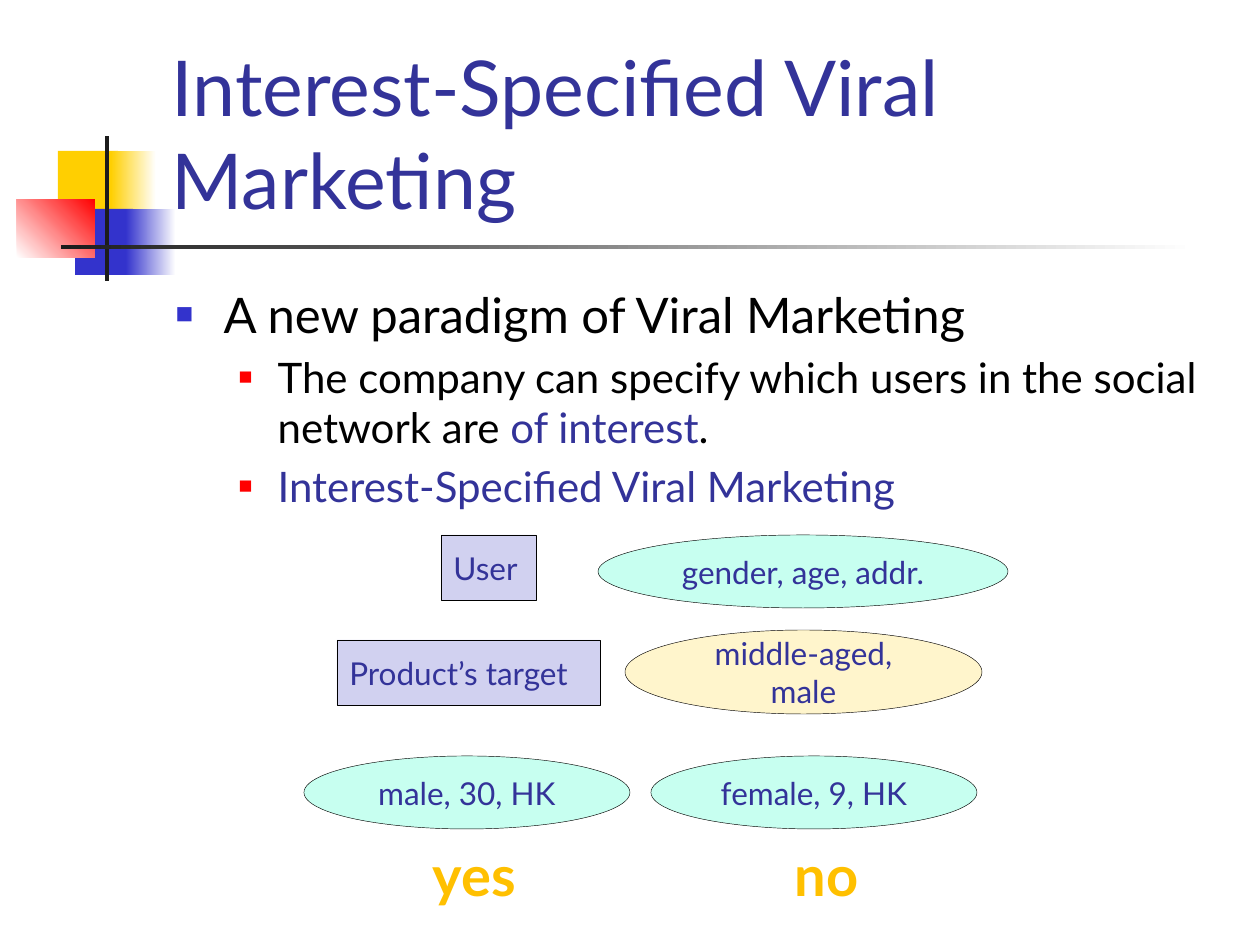
"""Build a slide on interest-specified viral marketing."""
import pptx
import pptx.util
import pptx.dml.color
import pptx.enum.shapes
import pptx.enum.text
import pptx.oxml
import pptx.oxml.ns

RGB = pptx.dml.color.RGBColor
SHAPE = pptx.enum.shapes.MSO_SHAPE
ALIGN = pptx.enum.text.PP_ALIGN
ANCHOR = pptx.enum.text.MSO_ANCHOR
Pt = pptx.util.Pt

SCALE = 914400 / 126
FONT = "Lato"
INK = RGB(0x33, 0x33, 0x99)
BLACK = RGB(0, 0, 0)
WHITE = RGB(0xFF, 0xFF, 0xFF)
YELLOW = RGB(0xFF, 0xCF, 0x01)
BLUE = RGB(0x33, 0x33, 0xCC)
RED = RGB(0xFF, 0, 0)
DARK = RGB(0x1C, 0x1C, 0x1C)
LILAC = RGB(0xD1, 0xD1, 0xF0)
MINT = RGB(0xC7, 0xFF, 0xF0)
CREAM = RGB(0xFF, 0xF5, 0xCC)
GOLD = RGB(0xFF, 0xC0, 0)

TITLE = "Interest-Specified Viral Marketing"
BULLETS = [
    (0, [("A new paradigm of Viral Marketing", BLACK)]),
    (1, [("The company can specify which users in the social network are ", BLACK),
         ("of interest", INK), (".", BLACK)]),
    (1, [(TITLE, INK)]),
]
LEVELS = [
    dict(size=28, left=48, hang=48, color=BLUE, percent=60),
    dict(size=24, left=102, hang=39, color=RED, percent=55),
]
ORNAMENTS = [
    ((58, 151, 60, 65), (YELLOW,), 0),
    ((111, 151, 45, 65), (YELLOW, WHITE), 0),
    ((75, 209, 58, 66), (BLUE,), 0),
    ((126, 209, 50, 66), (BLUE, WHITE), 0),
    ((17, 199, 78, 59), (WHITE, RED), 45),
    ((105, 136, 4, 145), (DARK,), 0),
    ((61, 245, 1134, 4), (DARK, WHITE), 0),
]
NODES = [
    ("User", SHAPE.RECTANGLE, (441, 535, 95, 65), LILAC),
    ("gender, age, addr.", SHAPE.OVAL, (598, 535, 410, 73), MINT),
    ("middle-aged, male", SHAPE.OVAL, (625, 630, 357, 84), CREAM),
    ("Product’s target", SHAPE.RECTANGLE, (337, 640, 263, 65), LILAC),
    ("male, 30, HK", SHAPE.OVAL, (304, 756, 326, 73), MINT),
    ("female, 9, HK", SHAPE.OVAL, (651, 756, 326, 73), MINT),
]
VERDICTS = [("yes", (414, 834, 121, 81)), ("no", (778, 834, 97, 81))]


def px(n):
    return round(n * SCALE)


def box(rect):
    return [px(n) for n in rect]


def write(p, text, size=18, color=INK, bold=False, align=ALIGN.LEFT):
    p.alignment = align
    r = p.add_run()
    r.text = text
    r.font.name, r.font.size, r.font.bold = FONT, Pt(size), bold
    r.font.color.rgb = color


def add_shape(slide, kind, rect, colors, angle=0):
    sp = slide.shapes.add_shape(kind, *box(rect))
    sp.shadow.inherit = False
    sp.line.fill.background()
    if len(colors) == 1:
        sp.fill.solid()
        sp.fill.fore_color.rgb = colors[0]
    else:
        sp.fill.gradient()
        sp.fill.gradient_angle = angle
        for stop, color in zip(sp.fill.gradient_stops, colors):
            stop.color.rgb = color
    return sp


def place(sp, rect, anchor):
    sp.left, sp.top, sp.width, sp.height = box(rect)
    tf = sp.text_frame
    tf.auto_size = pptx.enum.text.MSO_AUTO_SIZE.NONE
    tf.vertical_anchor = anchor
    return tf


def set_bullet(p, size, left, hang, color, percent):
    p.space_before = Pt(size * 0.2)
    pPr = p._p.get_or_add_pPr()
    pPr.set("marL", str(px(left)))
    pPr.set("indent", str(-px(hang)))
    ns = pptx.oxml.ns.nsdecls("a")
    for xml in (f'<a:buClr {ns}><a:srgbClr val="{color}"/></a:buClr>',
                f'<a:buSzPct {ns} val="{percent * 1000}"/>',
                f'<a:buChar {ns} char="■"/>'):
        pPr.append(pptx.oxml.parse_xml(xml))


def main():
    prs = pptx.Presentation()
    prs.slide_width, prs.slide_height = px(1260), px(945)
    slide = prs.slides.add_slide(prs.slide_layouts[1])
    title, body = slide.placeholders

    for rect, colors, angle in ORNAMENTS:
        sp = add_shape(slide, SHAPE.RECTANGLE, rect, colors, angle)
        title._element.addprevious(sp._element)

    tf = place(title, (159, 29, 1073, 202), ANCHOR.BOTTOM)
    write(tf.paragraphs[0], TITLE, size=44)

    tf = place(body, (163, 278, 1071, 567), ANCHOR.TOP)
    for i, (level, runs) in enumerate(BULLETS):
        p = tf.add_paragraph() if i else tf.paragraphs[0]
        p.level = level
        set_bullet(p, **LEVELS[level])
        for text, color in runs:
            write(p, text, size=LEVELS[level]["size"], color=color)

    for text, kind, rect, fill in NODES:
        sp = add_shape(slide, kind, rect, (fill,))
        sp.line.color.rgb = BLACK
        sp.line.width = Pt(0.25)
        tf = sp.text_frame
        tf.word_wrap = True
        tf.vertical_anchor = ANCHOR.MIDDLE
        align = ALIGN.CENTER if kind == SHAPE.OVAL else ALIGN.LEFT
        write(tf.paragraphs[0], text, align=align)

    for text, rect in VERDICTS:
        tf = slide.shapes.add_textbox(*box(rect)).text_frame
        tf.word_wrap = False
        write(tf.paragraphs[0], text, size=32, color=GOLD, bold=True, align=ALIGN.CENTER)

    prs.save("out.pptx")


if __name__ == "__main__":
    main()
